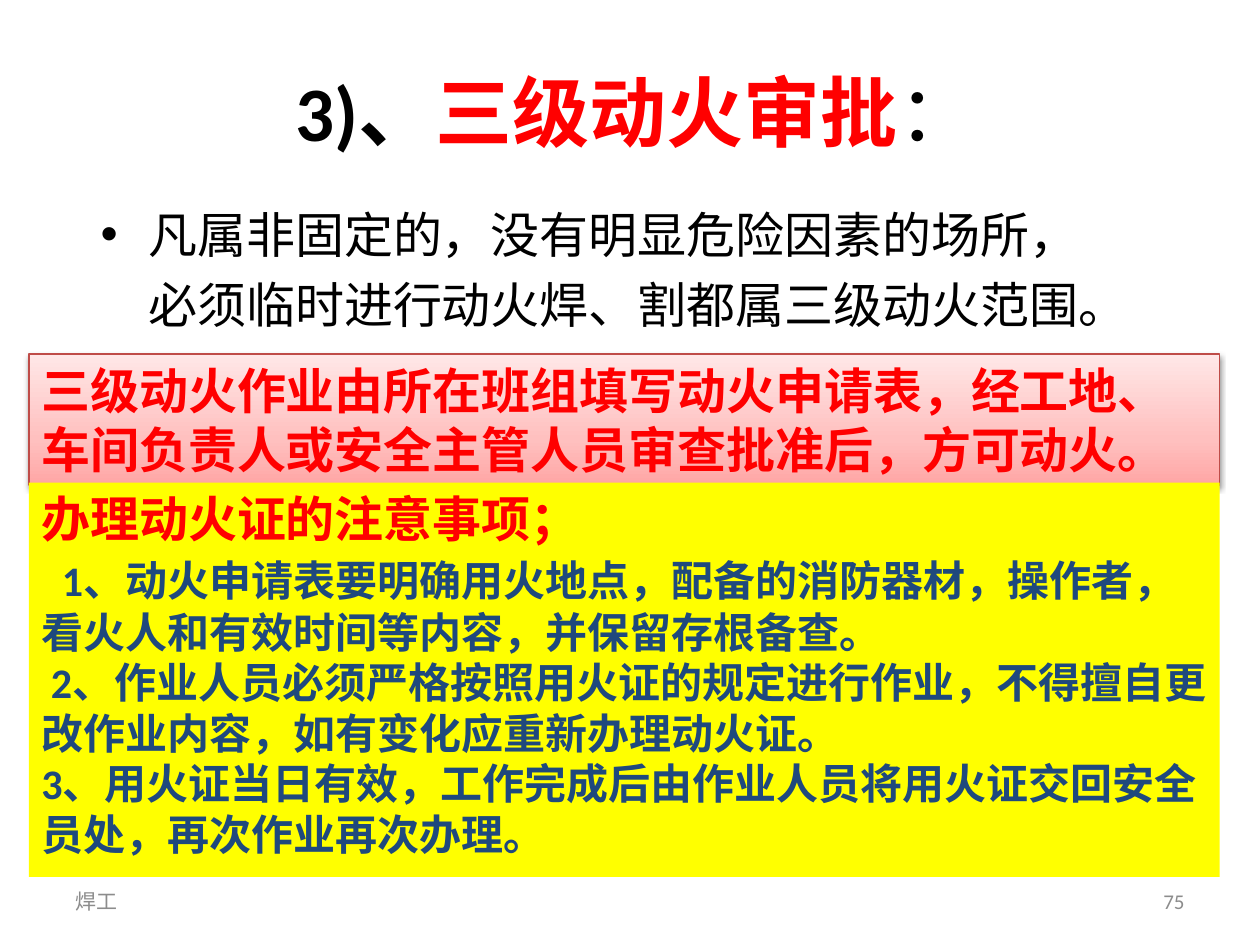
from lxml.etree import SubElement
from pptx import Presentation
from pptx.dml.color import RGBColor
from pptx.enum.shapes import MSO_SHAPE
from pptx.enum.text import MSO_ANCHOR, MSO_AUTO_SIZE, PP_ALIGN
from pptx.oxml import parse_xml
from pptx.oxml.ns import nsdecls, qn
from pptx.util import Inches, Pt

HUES = {"black": "000000", "red": "FF0000", "navy": "1F497D", "gray": "8C8C8C",
        "yellow": "FFFF00", "edge": "BF4C48"}
FADE = [(0, "FFA6A5"), (35, "FFC0BF"), (100, "FFE7E7")]


def rgb(name):
    return RGBColor.from_string(HUES[name])


def write(par, text, size=28, hue="black", bold=False, align=PP_ALIGN.LEFT):
    par.alignment = align
    run = par.add_run()
    run.text = text
    font = run.font
    font.name, font.size, font.bold = "Calibri", Pt(size), bold
    font.color.rgb = rgb(hue)


deck = Presentation()
deck.slide_width, deck.slide_height = Inches(10), Inches(7.5)
slide = deck.slides.add_slide(deck.slide_layouts[5])
shapes = slide.shapes

# Title
title = shapes.title
title.left, title.top = Inches(0.92), Inches(0.46)
title.width, title.height = Inches(8.25), Inches(0.83)
title.text_frame.vertical_anchor = MSO_ANCHOR.MIDDLE
head = title.text_frame.paragraphs[0]
for text, hue, bold in [("3)、", "black", True), ("三级动火审批", "red", True),
                        ("：", "black", False)]:
    write(head, text, size=44, hue=hue, bold=bold, align=PP_ALIGN.CENTER)

# Footer and page number
for left, text, align in [(0.5, "焊工", PP_ALIGN.LEFT), (7.17, "75", PP_ALIGN.RIGHT)]:
    box = shapes.add_textbox(Inches(left), Inches(6.95), Inches(2.33), Inches(0.4))
    frame = box.text_frame
    frame.word_wrap = True
    frame.vertical_anchor = MSO_ANCHOR.MIDDLE
    write(frame.paragraphs[0], text, size=12, hue="gray", align=align)

# Scope bullet
scope = shapes.add_textbox(Inches(0.7), Inches(1.48), Inches(8.33), Inches(1.3))
scope.text_frame.word_wrap = True
par = scope.text_frame.paragraphs[0]
props = par._p.get_or_add_pPr()
props.set("marL", str(Inches(0.38)))
props.set("indent", str(-Inches(0.38)))
SubElement(props, qn("a:buFont")).set("typeface", "Arial")
SubElement(props, qn("a:buChar")).set("char", "•")
par.line_spacing = 1.2
write(par, "凡属非固定的，没有明显危险因素的场所，必须临时进行动火焊、割都属三级动火范围。")

# Approval and notes panels: each paragraph is a list of (text, size, hue)
approval = [[("三级动火作业由所在班组填写动火申请表，经工地、车间负责人或安全主管人员审查批准后，方可动火。", 28, "red")]]
notes = [
    [("办理动火证的注意事项；", 28, "red")],
    [(" ", 28, "navy"),
     (" 1、动火申请表要明确用火地点，配备的消防器材，操作者，看火人和有效时间等内容，并保留存根备查。", 24, "navy")],
    [(" 2、作业人员必须严格按照用火证的规定进行作业，不得擅自更改作业内容，如有变化应重新办理动火证。 ", 24, "navy")],
    [("3、用火证当日有效，工作完成后由作业人员将用火证交回安全员处，再次作业再次办理。", 24, "navy")],
]
panels = []
for top, high, pars in [(2.81, 1.04, approval), (3.83, 3.13, notes)]:
    panel = shapes.add_shape(MSO_SHAPE.RECTANGLE, Inches(0.23), Inches(top),
                             Inches(9.45), Inches(high))
    panel.shadow.inherit = False
    frame = panel.text_frame
    frame.word_wrap = True
    frame.auto_size = MSO_AUTO_SIZE.SHAPE_TO_FIT_TEXT
    frame.vertical_anchor = MSO_ANCHOR.TOP
    for i, runs in enumerate(pars):
        par = frame.add_paragraph() if i else frame.paragraphs[0]
        for text, size, hue in runs:
            write(par, text, size=size, hue=hue, bold=True)
    panels.append(panel)
pink, gold = panels

# Yellow notes fill
gold.fill.solid()
gold.fill.fore_color.rgb = rgb("yellow")
gold.line.fill.background()

# Pink approval line, gradient and soft shadow
pink.line.color.rgb = rgb("edge")
pink.line.width = Pt(0.75)
stops = "".join(f'<a:gs pos="{pos * 1000}"><a:srgbClr val="{hue}"/></a:gs>'
                for pos, hue in FADE)
look = pink._element.spPr
look.find(qn("a:prstGeom")).addnext(parse_xml(
    f'<a:gradFill {nsdecls("a")} rotWithShape="1"><a:gsLst>{stops}</a:gsLst>'
    '<a:lin ang="16200000" scaled="1"/></a:gradFill>'))
look.find(qn("a:effectLst")).append(parse_xml(
    f'<a:outerShdw {nsdecls("a")} blurRad="{Pt(3.1)}" dist="{Pt(1.6)}" dir="5400000" '
    'rotWithShape="0"><a:srgbClr val="000000"><a:alpha val="38000"/></a:srgbClr>'
    '</a:outerShdw>'))

deck.save("out.pptx")
